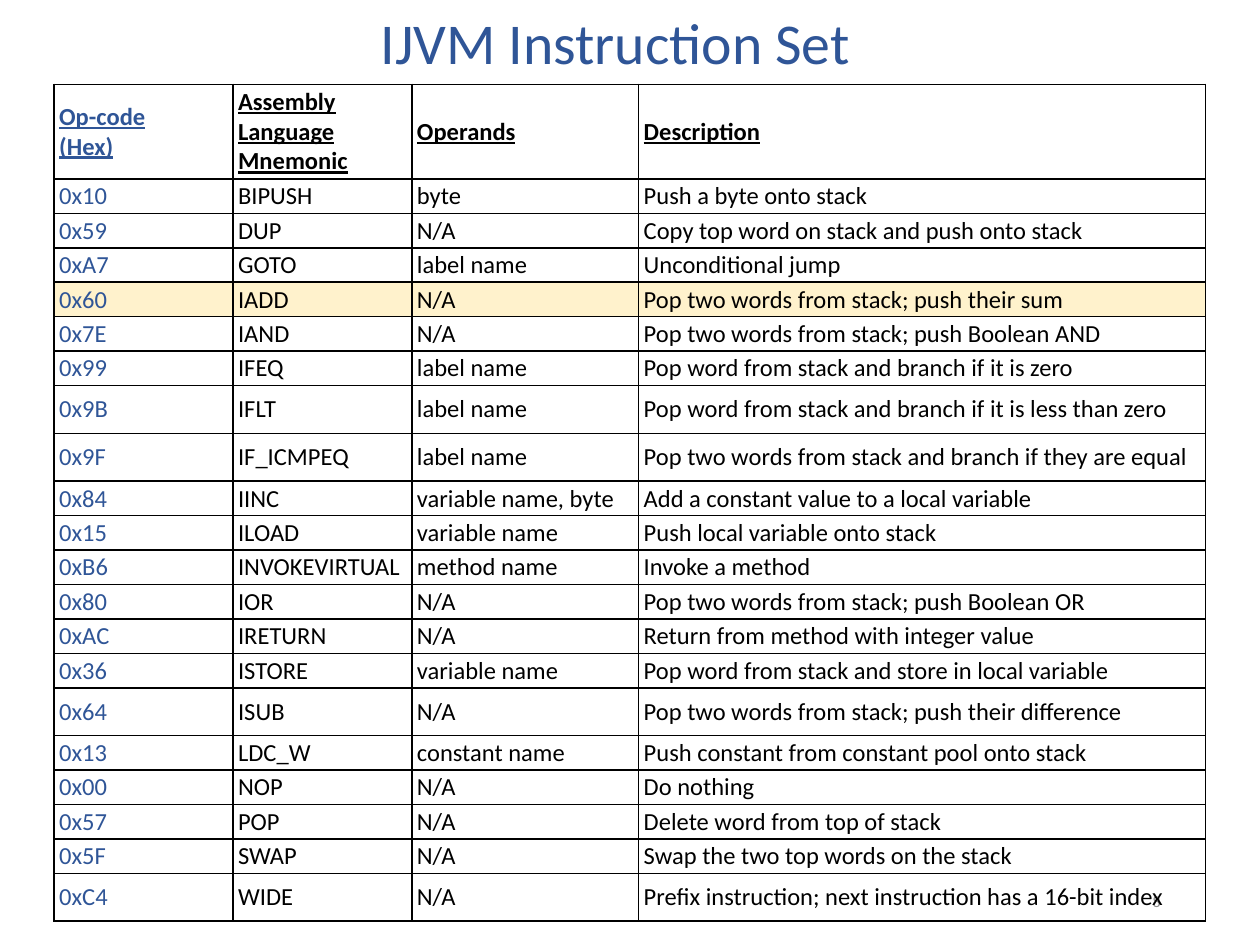
from dataclasses import dataclass

from lxml.etree import SubElement
from pptx import Presentation
from pptx.dml.color import RGBColor
from pptx.enum.text import MSO_ANCHOR, MSO_AUTO_SIZE, PP_ALIGN
from pptx.oxml.ns import qn
from pptx.util import Inches, Pt


@dataclass(frozen=True)
class Theme:
    """Colours, font and type sizes of the slide."""
    font: str = "Calibri"
    accent: str = "2F5597"
    ink: str = "000000"
    muted: str = "8C8C8C"
    highlight: str = "FFF2CC"
    title_size: float = 33
    table_size: float = 14
    number_size: float = 9
    border_width: float = 1


THEME = Theme()
HEADINGS = ("Op-code\n(Hex)", "Assembly\nLanguage\nMnemonic", "Operands", "Description")
INSTRUCTIONS = [
    ("0x10", "BIPUSH", "byte", "Push a byte onto stack"),
    ("0x59", "DUP", "N/A", "Copy top word on stack and push onto stack"),
    ("0xA7", "GOTO", "label name", "Unconditional jump"),
    ("0x60", "IADD", "N/A", "Pop two words from stack; push their sum"),
    ("0x7E", "IAND", "N/A", "Pop two words from stack; push Boolean AND"),
    ("0x99", "IFEQ", "label name", "Pop word from stack and branch if it is zero"),
    ("0x9B", "IFLT", "label name", "Pop word from stack and branch if it is less than zero"),
    ("0x9F", "IF_ICMPEQ", "label name", "Pop two words from stack and branch if they are equal"),
    ("0x84", "IINC", "variable name, byte", "Add a constant value to a local variable"),
    ("0x15", "ILOAD", "variable name", "Push local variable onto stack"),
    ("0xB6", "INVOKEVIRTUAL", "method name", "Invoke a method"),
    ("0x80", "IOR", "N/A", "Pop two words from stack; push Boolean OR"),
    ("0xAC", "IRETURN", "N/A", "Return from method with integer value"),
    ("0x36", "ISTORE", "variable name", "Pop word from stack and store in local variable"),
    ("0x64", "ISUB", "N/A", "Pop two words from stack; push their difference"),
    ("0x13", "LDC_W", "constant name", "Push constant from constant pool onto stack"),
    ("0x00", "NOP", "N/A", "Do nothing"),
    ("0x57", "POP", "N/A", "Delete word from top of stack"),
    ("0x5F", "SWAP", "N/A", "Swap the two top words on the stack"),
    ("0xC4", "WIDE", "N/A", "Prefix instruction; next instruction has a 16-bit index"),
]
HIGHLIGHTED = {"IADD"}
TALL = {"IFLT", "IF_ICMPEQ", "ISUB", "WIDE"}
COLUMN_SHARES = (1.42, 1.42, 1.8, 4.5)
HEADING_HEIGHT, ROW_HEIGHT, TALL_HEIGHT = 0.75, 0.27, 0.38


def write_text(frame, text, *, size, color, align=PP_ALIGN.LEFT,
               bold=False, underline=False, spacing=1.0):
    """Write text into a frame, breaking lines at newlines."""
    frame.word_wrap = True
    paragraph = frame.paragraphs[0]
    paragraph.alignment = align
    paragraph.line_spacing = spacing
    for index, line in enumerate(text.split("\n")):
        if index:
            paragraph.add_line_break()
        run = paragraph.add_run()
        run.text = line
        run.font.name = THEME.font
        run.font.size = Pt(size)
        run.font.color.rgb = RGBColor.from_string(color)
        run.font.bold = bold
        run.font.underline = underline


def place_title(slide, box):
    """Place the slide title in the given box."""
    title = slide.shapes.title
    title.left, title.top, title.width, title.height = map(Inches, box)
    title.text_frame.auto_size = MSO_AUTO_SIZE.NONE
    title.text_frame.vertical_anchor = MSO_ANCHOR.MIDDLE
    write_text(title.text_frame, "IJVM Instruction Set", size=THEME.title_size,
               color=THEME.accent, align=PP_ALIGN.CENTER, spacing=0.9)


def place_number(slide, box):
    """Place the slide number in the given box."""
    number = slide.shapes.add_textbox(*map(Inches, box))
    number.text_frame.vertical_anchor = MSO_ANCHOR.MIDDLE
    write_text(number.text_frame, "8", size=THEME.number_size,
               color=THEME.muted, align=PP_ALIGN.RIGHT)


def draw_borders(cell):
    """Draw a solid line on all four sides of a cell."""
    properties = cell._tc.get_or_add_tcPr()
    for side in ("a:lnL", "a:lnR", "a:lnT", "a:lnB"):
        border = SubElement(properties, qn(side), w=str(Pt(THEME.border_width)))
        fill = SubElement(border, qn("a:solidFill"))
        SubElement(fill, qn("a:srgbClr"), val=THEME.ink)


def fill_cell(cell, text, *, color, heading, highlighted):
    """Format one table cell and write its text."""
    cell.margin_left = cell.margin_right = Inches(0.04)
    cell.margin_top = cell.margin_bottom = Inches(0.02)
    cell.vertical_anchor = MSO_ANCHOR.MIDDLE
    draw_borders(cell)
    if highlighted:
        cell.fill.solid()
        cell.fill.fore_color.rgb = RGBColor.from_string(THEME.highlight)
    else:
        cell.fill.background()
    write_text(cell.text_frame, text, size=THEME.table_size, color=color,
               bold=heading, underline=heading)


def place_instructions(slide, box):
    """Place the instruction table in the given box."""
    records = [HEADINGS, *INSTRUCTIONS]
    table = slide.shapes.add_table(len(records), len(HEADINGS), *map(Inches, box)).table
    table.first_row = table.horz_banding = False
    for column, share in zip(table.columns, COLUMN_SHARES):
        column.width = Inches(box[2] * share / sum(COLUMN_SHARES))
    for row, record in zip(table.rows, records):
        heading = record is HEADINGS
        mnemonic = record[1]
        height = TALL_HEIGHT if mnemonic in TALL else ROW_HEIGHT
        row.height = Inches(HEADING_HEIGHT if heading else height)
        for index, (cell, text) in enumerate(zip(row.cells, record)):
            fill_cell(cell, text, color=THEME.ink if index else THEME.accent,
                      heading=heading, highlighted=mnemonic in HIGHLIGHTED)


def main():
    """Build and save the presentation."""
    presentation = Presentation()
    presentation.slide_width, presentation.slide_height = Inches(10), Inches(7.5)
    slide = presentation.slides.add_slide(presentation.slide_layouts[5])
    place_title(slide, (0.21, 0.06, 9.35, 0.61))
    place_number(slide, (7.06, 6.95, 2.25, 0.4))
    place_instructions(slide, (0.43, 0.67, 9.14, 6.64))
    presentation.save("out.pptx")


if __name__ == "__main__":
    main()
